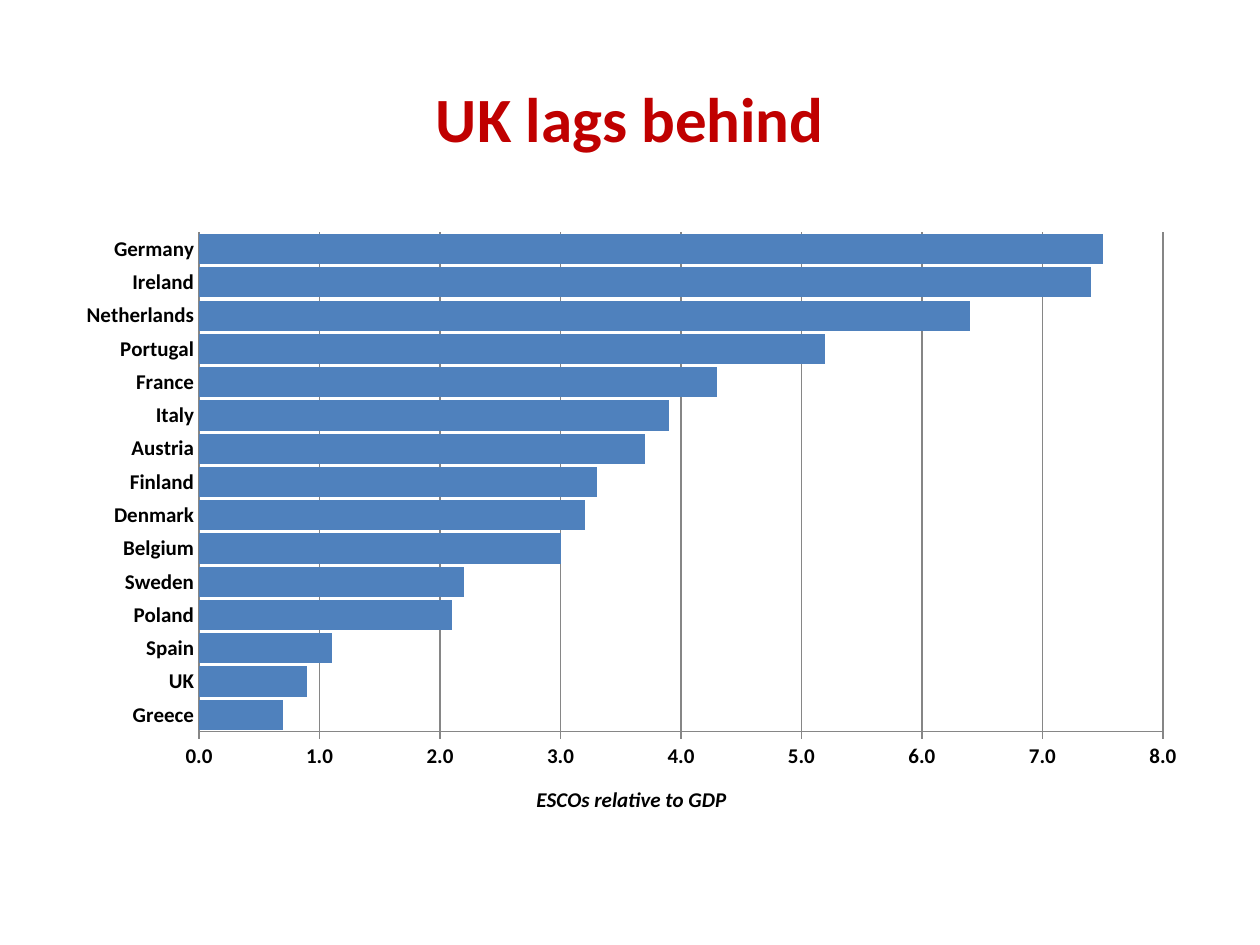
import pptx
import pptx.chart.data
import pptx.dml.color
import pptx.enum.chart
import pptx.enum.text
import pptx.util
from lxml import etree

FONT = "Calibri"
ESCOS_BY_COUNTRY = {
    "Greece": 0.7, "UK": 0.9, "Spain": 1.1, "Poland": 2.1, "Sweden": 2.2,
    "Belgium": 3.0, "Denmark": 3.2, "Finland": 3.3, "Austria": 3.7,
    "Italy": 3.9, "France": 4.3, "Portugal": 5.2, "Netherlands": 6.4,
    "Ireland": 7.4, "Germany": 7.5,
}


def px(length):
    """Turn whole pixels into EMU."""
    return pptx.util.Emu(round(length * 914400 / 126))


def color(hex_code):
    """Turn a hex string into a colour."""
    return pptx.dml.color.RGBColor.from_string(hex_code)


def style_font(font, size, hex_code, italic=False):
    """Apply the bold slide typeface to a font."""
    font.name = FONT
    font.size = pptx.util.Pt(size)
    font.bold = True
    font.italic = italic
    font.color.rgb = color(hex_code)


def set_layout(element, **fractions):
    """Place a chart part at fractions of the chart box."""
    layout = element.get_or_add_layout()
    manual = layout.get_or_add_manualLayout()
    for child in list(manual):
        manual.remove(child)
    namespace = etree.QName(layout).namespace
    settings = {"xMode": "edge", "yMode": "edge", **fractions}
    if "w" in fractions:
        settings = {"layoutTarget": "inner", **settings}
    for tag, value in settings.items():
        etree.SubElement(manual, f"{{{namespace}}}{tag}").set("val", str(value))


def add_heading(slide, left, top, width, height):
    """Write the centred heading in its box."""
    heading = slide.shapes.add_textbox(px(left), px(top), px(width), px(height))
    frame = heading.text_frame
    frame.word_wrap = True
    frame.vertical_anchor = pptx.enum.text.MSO_ANCHOR.MIDDLE
    line = frame.paragraphs[0]
    line.text = "UK lags behind"
    line.alignment = pptx.enum.text.PP_ALIGN.CENTER
    style_font(line.font, 36, "C00000")


def style_axes(chart):
    """Format the country axis and the value axis with its title."""
    ticks = pptx.enum.chart.XL_TICK_MARK
    countries, ratio = chart.category_axis, chart.value_axis
    for axis, tick in ((countries, ticks.NONE), (ratio, ticks.OUTSIDE)):
        axis.major_tick_mark = tick
        axis.minor_tick_mark = ticks.NONE
        axis.format.line.color.rgb = color("868686")
        style_font(axis.tick_labels.font, 12, "000000")
    countries.has_major_gridlines = False
    ratio.minimum_scale, ratio.maximum_scale, ratio.major_unit = 0, 8, 1
    ratio.has_major_gridlines = True
    ratio.major_gridlines.format.line.color.rgb = color("868686")
    ratio.tick_labels.number_format = "0.0"
    ratio.tick_labels.number_format_is_linked = False
    caption = ratio.axis_title.text_frame.paragraphs[0]
    caption.text = "ESCOs relative to GDP"
    style_font(caption.font, 12, "000000", italic=True)
    style_font(caption.runs[0].font, 12, "000000", italic=True)


def add_ranking(slide, left, top, width, height):
    """Draw the bar chart of countries in its box."""
    ranking = pptx.chart.data.CategoryChartData(number_format="0.0")
    ranking.categories = list(ESCOS_BY_COUNTRY)
    ranking.add_series("Series 1", list(ESCOS_BY_COUNTRY.values()))
    chart = slide.shapes.add_chart(
        pptx.enum.chart.XL_CHART_TYPE.BAR_CLUSTERED,
        px(left), px(top), px(width), px(height), ranking,
    ).chart
    chart.has_legend = False
    chart.has_title = False
    chart.font.name = FONT
    chart.font.size = pptx.util.Pt(18)
    chart.font.color.rgb = color("000000")
    plot = chart.plots[0]
    plot.gap_width = 10
    plot.vary_by_categories = False
    bars = plot.series[0]
    bars.invert_if_negative = False
    bars.format.fill.solid()
    bars.format.fill.fore_color.rgb = color("4F81BD")
    style_axes(chart)
    plot_area = chart.value_axis.axis_title._element.getparent().getparent()
    namespace = etree.QName(plot_area).namespace
    layout = plot_area.find(f"{{{namespace}}}layout")
    if layout is None:
        layout = etree.Element(f"{{{namespace}}}layout")
        plot_area.insert(0, layout)
    manual = etree.SubElement(layout, f"{{{namespace}}}manualLayout")
    inner = {"layoutTarget": "inner", "xMode": "edge", "yMode": "edge",
             "x": 0.12, "y": 0.02, "w": 0.85, "h": 0.8}
    for tag, value in inner.items():
        etree.SubElement(manual, f"{{{namespace}}}{tag}").set("val", str(value))


def main():
    """Build and save the slide."""
    deck = pptx.Presentation()
    deck.slide_width, deck.slide_height = px(1260), px(945)
    slide = deck.slides.add_slide(deck.slide_layouts[6])
    add_heading(slide, 63, 38, 1134, 158)
    add_ranking(slide, 63, 220, 1134, 624)
    deck.save("out.pptx")


if __name__ == "__main__":
    main()
